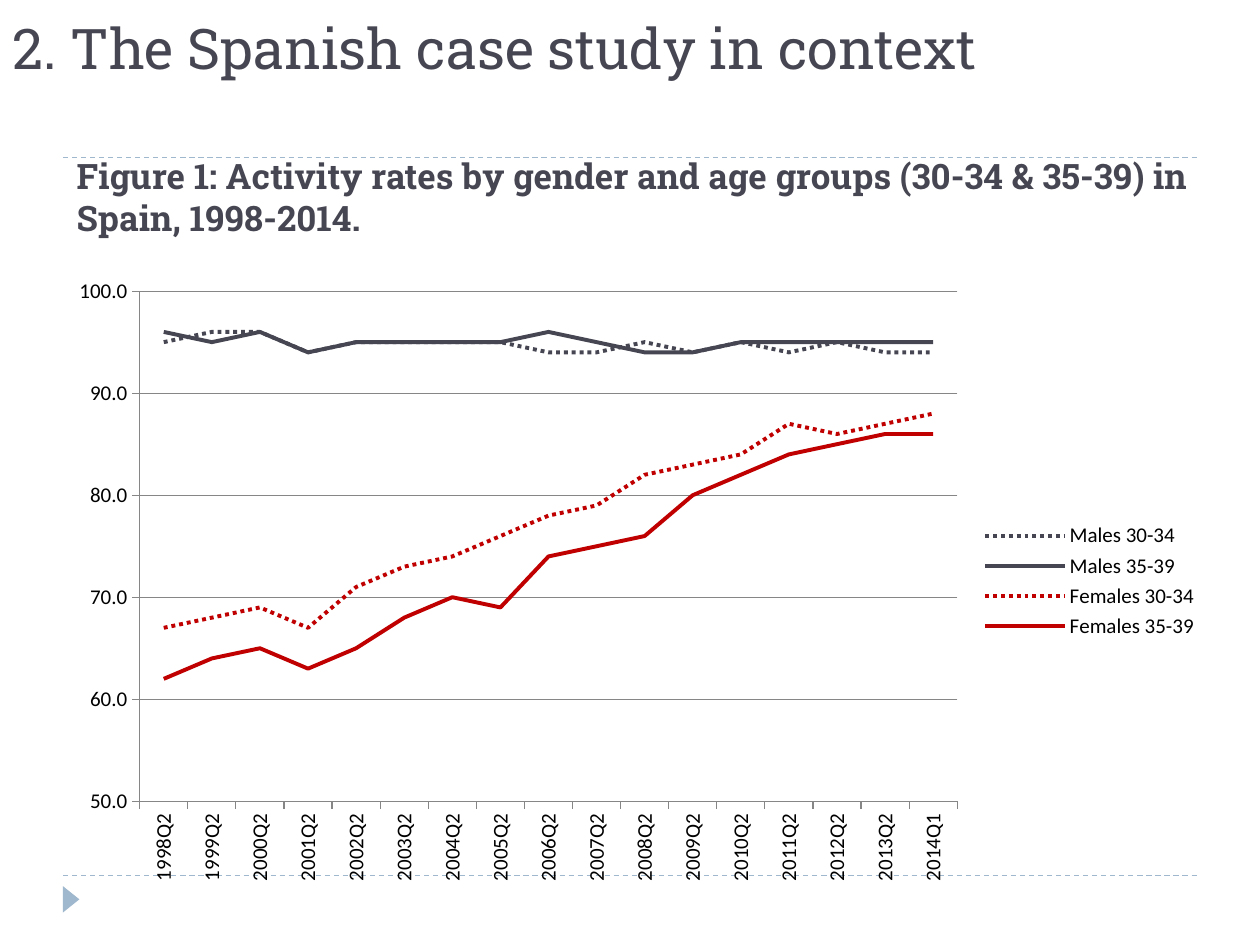
from dataclasses import dataclass

from lxml import etree
from pptx import Presentation
from pptx.chart.data import CategoryChartData
from pptx.dml.color import RGBColor
from pptx.enum.chart import XL_CHART_TYPE, XL_LEGEND_POSITION, XL_TICK_MARK
from pptx.enum.dml import MSO_LINE
from pptx.enum.shapes import MSO_CONNECTOR, MSO_SHAPE
from pptx.enum.text import MSO_ANCHOR
from pptx.oxml.ns import qn
from pptx.util import Pt

LINE_CHART = XL_CHART_TYPE.LINE
LEGEND_RIGHT = XL_LEGEND_POSITION.RIGHT
TICK_OUT = XL_TICK_MARK.OUTSIDE
DASH, DOTS = MSO_LINE.DASH, MSO_LINE.ROUND_DOT
STRAIGHT = MSO_CONNECTOR.STRAIGHT
TRIANGLE = MSO_SHAPE.ISOSCELES_TRIANGLE
BOTTOM = MSO_ANCHOR.BOTTOM


@dataclass(frozen=True)
class Theme:
    ink: RGBColor = RGBColor(0x46, 0x46, 0x53)
    red: RGBColor = RGBColor(0xC0, 0x00, 0x00)
    accent: RGBColor = RGBColor(0x9F, 0xB8, 0xCD)
    grid: RGBColor = RGBColor(0x86, 0x86, 0x86)
    black: RGBColor = RGBColor(0, 0, 0)
    heading_font: str = "Roboto Slab"
    chart_font: str = "Calibri"
    title_size: int = 32
    caption_size: int = 20
    chart_size: int = 12
    rule_width: float = 0.75
    grid_width: float = 0.7
    series_width: float = 2.25


THEME = Theme()

QUARTERS = [f"{year}Q2" for year in range(1998, 2014)] + ["2014Q1"]
ACTIVITY_RATES = [
    ("Males 30-34", THEME.ink, True,
     [95, 96, 96, 94, 95, 95, 95, 95, 94, 94, 95, 94, 95, 94, 95, 94, 94]),
    ("Males 35-39", THEME.ink, False,
     [96, 95, 96, 94, 95, 95, 95, 95, 96, 95, 94, 94, 95, 95, 95, 95, 95]),
    ("Females 30-34", THEME.red, True,
     [67, 68, 69, 67, 71, 73, 74, 76, 78, 79, 82, 83, 84, 87, 86, 87, 88]),
    ("Females 35-39", THEME.red, False,
     [62, 64, 65, 63, 65, 68, 70, 69, 74, 75, 76, 80, 82, 84, 85, 86, 86]),
]


def add_rule(s, y):
    """Draw a dashed line across the slide between its side margins."""
    line = s.shapes.add_connector(STRAIGHT, Pt(36), Pt(y), Pt(684), Pt(y))
    line.line.color.rgb = THEME.accent
    line.line.width = Pt(THEME.rule_width)
    line.line.dash_style = DASH
    etree.SubElement(line._element.spPr, qn("a:effectLst"))


def add_marker(s):
    sp = s.shapes.add_shape(TRIANGLE, Pt(33.1), Pt(509.2), Pt(15.1), Pt(9.4))
    sp.rotation = 90
    sp.shadow.inherit = False
    sp.fill.solid()
    sp.fill.fore_color.rgb = THEME.accent
    sp.line.fill.background()


def add_text(s, text, box, size, bold=False):
    tf = s.shapes.add_textbox(*map(Pt, box)).text_frame
    tf.word_wrap = True
    tf.vertical_anchor = BOTTOM
    tf.text = text
    font = tf.paragraphs[0].runs[0].font
    font.name, font.size, font.bold = THEME.heading_font, Pt(size), bold
    font.color.rgb = THEME.ink


def make_layout(x, y, w, h, inner=False):
    """Return a chart layout element; values are fractions of the chart."""
    layout = etree.Element(qn("c:layout"))
    manual = etree.SubElement(layout, qn("c:manualLayout"))
    settings = [("layoutTarget", "inner")] if inner else []
    settings += [("xMode", "edge"), ("yMode", "edge"),
                 ("x", x), ("y", y), ("w", w), ("h", h)]
    for tag, value in settings:
        etree.SubElement(manual, qn(f"c:{tag}")).set("val", str(value))
    return layout


def place_parts(chart):
    """Fix the places of the plot area and the legend."""
    plot_area = chart._chartSpace.chart.plotArea
    legend = chart.legend._element
    for parent in (plot_area, legend):
        for old in parent.findall(qn("c:layout")):
            parent.remove(old)
    plot_area.insert(0, make_layout(0.07, 0.04, 0.71, 0.81, inner=True))
    legend.find(qn("c:legendPos")).addnext(make_layout(0.8, 0.4, 0.19, 0.2))


def style_axes(chart):
    rates, quarters = chart.value_axis, chart.category_axis
    rates.minimum_scale, rates.maximum_scale, rates.major_unit = 50, 100, 10
    rates.has_major_gridlines = True
    rates.tick_labels.number_format = "0.0"
    rates.tick_labels.number_format_is_linked = False
    quarters.tick_labels.font.size = Pt(THEME.chart_size)
    body = quarters._element.find(qn("c:txPr")).find(qn("a:bodyPr"))
    body.set("rot", "-5400000")
    body.set("vert", "horz")
    for axis in (rates, quarters):
        axis.major_tick_mark = TICK_OUT
    for part in (rates, quarters, rates.major_gridlines):
        part.format.line.color.rgb = THEME.grid
        part.format.line.width = Pt(THEME.grid_width)


def add_rates_chart(s):
    data = CategoryChartData(number_format="0.0")
    data.categories = QUARTERS
    for name, _, _, values in ACTIVITY_RATES:
        data.add_series(name, values)
    chart = s.shapes.add_chart(
        LINE_CHART, Pt(33.8), Pt(152), Pt(658), Pt(360), data).chart
    chart.has_title = False
    chart.font.name = THEME.chart_font
    chart.font.size = Pt(THEME.chart_size)
    chart.font.color.rgb = THEME.black
    chart.has_legend = True
    chart.legend.position = LEGEND_RIGHT
    chart.legend.include_in_layout = False
    chart.plots[0].vary_by_categories = False
    for series, (_, color, dotted, _) in zip(chart.plots[0].series,
                                             ACTIVITY_RATES):
        series.smooth = False
        line = series.format.line
        line.color.rgb = color
        line.width = Pt(THEME.series_width)
        if dotted:
            line.dash_style = DOTS
    style_axes(chart)
    place_parts(chart)


def main():
    prs = Presentation()
    prs.slide_width, prs.slide_height = Pt(720), Pt(540)
    s = prs.slides.add_slide(prs.slide_layouts[6])
    for y in (500.4, 90):
        add_rule(s, y)
    add_marker(s)
    add_text(s, "2. The Spanish case study in context",
             (0, -2, 720, 52), THEME.title_size)
    add_text(s, "Figure 1: Activity rates by gender and age groups "
             "(30-34 & 35-39) in Spain, 1998-2014.",
             (36.7, 90, 663, 49.7), THEME.caption_size, True)
    add_rates_chart(s)
    prs.save("out.pptx")


if __name__ == "__main__":
    main()
